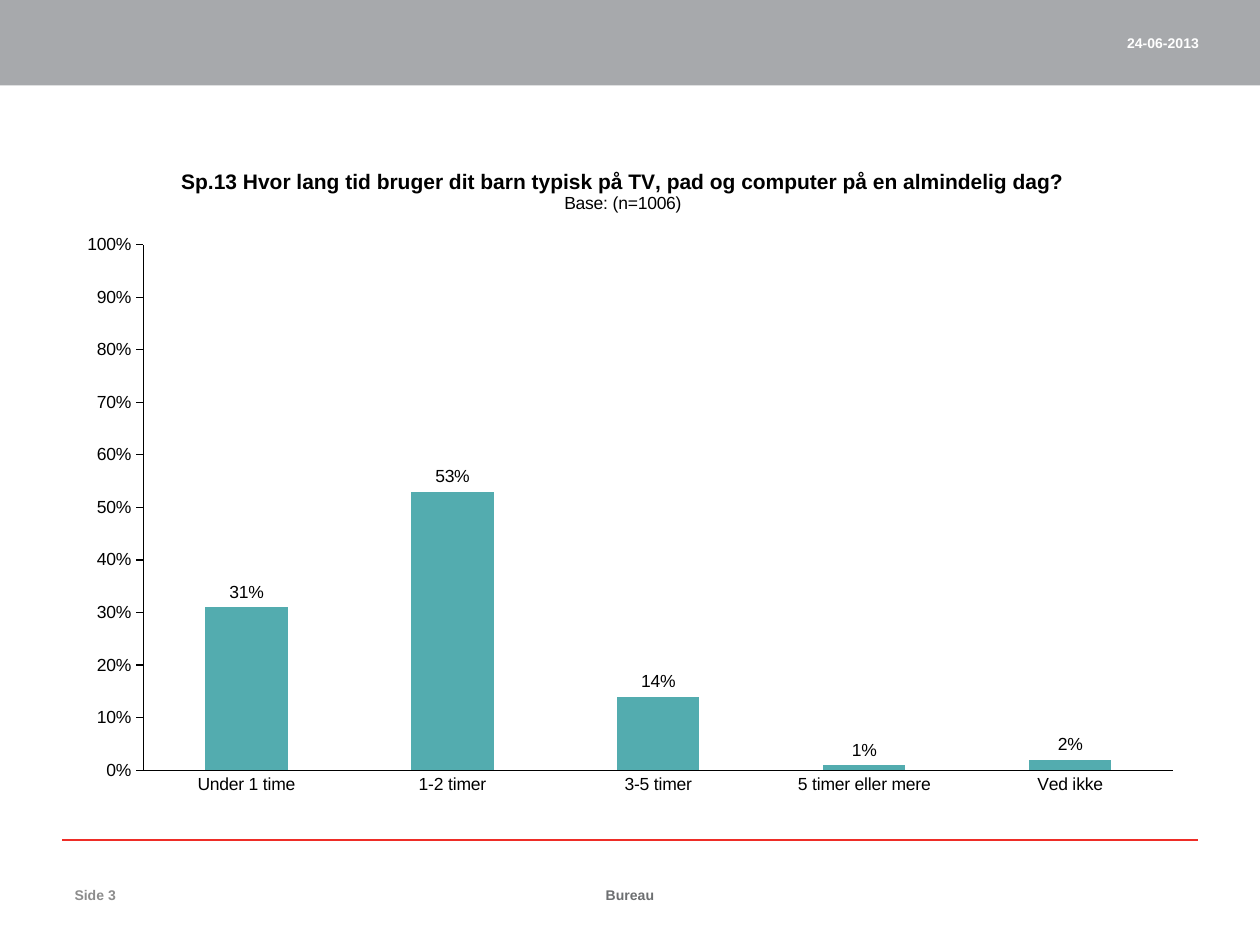
from lxml import etree
from pptx import Presentation
from pptx.chart.data import CategoryChartData
from pptx.dml.color import RGBColor
from pptx.enum.chart import XL_CHART_TYPE, XL_LABEL_POSITION, XL_TICK_MARK
from pptx.enum.shapes import MSO_CONNECTOR, MSO_SHAPE
from pptx.enum.text import MSO_ANCHOR, PP_ALIGN
from pptx.oxml.ns import qn
from pptx.util import Pt

COLUMNS = XL_CHART_TYPE.COLUMN_CLUSTERED
OUTSIDE_END = XL_LABEL_POSITION.OUTSIDE_END
TICK_NONE, TICK_OUT = XL_TICK_MARK.NONE, XL_TICK_MARK.OUTSIDE
STRAIGHT, RECT = MSO_CONNECTOR.STRAIGHT, MSO_SHAPE.RECTANGLE
MIDDLE = MSO_ANCHOR.MIDDLE
LEFT, CENTER, RIGHT = PP_ALIGN.LEFT, PP_ALIGN.CENTER, PP_ALIGN.RIGHT

FONT = "Arial"
COLORS = {
    "band": "A7A9AC",
    "rule": "EE2D27",
    "date": "FFFFFF",
    "footer": "6D6F71",
    "page": "8C8C8C",
    "bar": "53ACAF",
    "text": "000000",
}
WIDTH, HEIGHT = 720, 540
MARGIN = 35.5

QUESTION = "Sp.13 Hvor lang tid bruger dit barn typisk på TV, pad og computer på en almindelig dag?"
BASE = "Base: (n=1006)"
ANSWERS = {
    "Under 1 time": 0.31,
    "1-2 timer": 0.53,
    "3-5 timer": 0.14,
    "5 timer eller mere": 0.01,
    "Ved ikke": 0.02,
}


def rgb(name):
    return RGBColor.from_string(COLORS[name])


def style_font(font, size, color, bold=False):
    font.name = FONT
    font.size = Pt(size)
    font.bold = bold
    font.color.rgb = rgb(color)


def add_band(slide, height):
    sp = slide.shapes.add_shape(RECT, 0, 0, Pt(WIDTH), Pt(height))
    sp.shadow.inherit = False
    sp.fill.solid()
    sp.fill.fore_color.rgb = rgb("band")
    sp.line.fill.background()


def add_rule(slide, y):
    line = slide.shapes.add_connector(
        STRAIGHT, Pt(MARGIN), Pt(y), Pt(WIDTH - MARGIN), Pt(y))
    line.line.color.rgb = rgb("rule")
    line.line.width = Pt(1.5)
    etree.SubElement(line.element.spPr, qn("a:effectLst"))


def add_label(slide, text, x, y, width, align, color):
    box = slide.shapes.add_textbox(Pt(x), Pt(y), Pt(width), Pt(28.8))
    tf = box.text_frame
    tf.word_wrap = True
    tf.vertical_anchor = MIDDLE
    p = tf.paragraphs[0]
    p.text = text
    p.alignment = align
    style_font(p.runs[0].font, 8, color, bold=True)


def set_layout(parent, index, inner=False, **fractions):
    """Place a chart part by fractions of the chart's size."""
    for old in parent.findall(qn("c:layout")):
        parent.remove(old)
    layout = etree.Element(qn("c:layout"))
    parent.insert(index, layout)
    manual = etree.SubElement(layout, qn("c:manualLayout"))
    settings = {"layoutTarget": "inner"} if inner else {}
    settings.update(xMode="edge", yMode="edge", **fractions)
    for tag, value in settings.items():
        etree.SubElement(manual, qn(f"c:{tag}")).set("val", str(value))


def style_axis(axis, tick):
    axis.has_major_gridlines = False
    axis.major_tick_mark = tick
    axis.minor_tick_mark = TICK_NONE
    axis.format.line.color.rgb = rgb("text")
    axis.format.line.width = Pt(0.75)
    style_font(axis.tick_labels.font, 10, "text")


def style_title(chart):
    chart.has_title = True
    tf = chart.chart_title.text_frame
    tf.text = f"{QUESTION}\n{BASE}"
    for p, size, bold in zip(tf.paragraphs, (12, 10), (True, False)):
        p.alignment = CENTER
        style_font(p.runs[0].font, size, "text", bold)


def add_answer_chart(slide):
    data = CategoryChartData(number_format="0%")
    data.categories = list(ANSWERS)
    data.add_series("Series 1", list(ANSWERS.values()))
    chart = slide.shapes.add_chart(
        COLUMNS, Pt(36.7), Pt(82.8), Pt(646.6), Pt(380.2), data).chart
    chart.has_legend = False
    style_font(chart.font, 10, "text")
    style_title(chart)

    style_axis(chart.category_axis, TICK_NONE)
    values = chart.value_axis
    style_axis(values, TICK_OUT)
    values.minimum_scale, values.maximum_scale = 0, 1
    values.major_unit = 0.1
    values.tick_labels.number_format = "0%"
    values.tick_labels.number_format_is_linked = False

    plot = chart.plots[0]
    plot.vary_by_categories = False
    plot.gap_width = 150
    plot.overlap = -17
    fill = plot.series[0].format.fill
    fill.solid()
    fill.fore_color.rgb = rgb("bar")

    plot.has_data_labels = True
    labels = plot.data_labels
    labels.show_value = True
    labels.number_format = "0%"
    labels.number_format_is_linked = False
    labels.position = OUTSIDE_END
    style_font(labels.font, 10, "text")

    root = chart.element.find(qn("c:chart"))
    set_layout(root.find(qn("c:title")), 1, x=0.1, y=0.03)
    set_layout(root.find(qn("c:plotArea")), 0, inner=True,
               x=0.07, y=0.15, w=0.91, h=0.79)


def main():
    prs = Presentation()
    prs.slide_width, prs.slide_height = Pt(WIDTH), Pt(HEIGHT)
    slide = prs.slides.add_slide(prs.slide_layouts[6])
    add_band(slide, 48.8)
    add_rule(slide, 480)
    add_label(slide, "24-06-2013", 524.2, 10, 168, RIGHT, "date")
    add_label(slide, "Bureau", 280.4, 497, 159.2, CENTER, "footer")
    add_label(slide, "Side 3", MARGIN, 497, 168, LEFT, "page")
    add_answer_chart(slide)
    prs.save("out.pptx")


if __name__ == "__main__":
    main()
